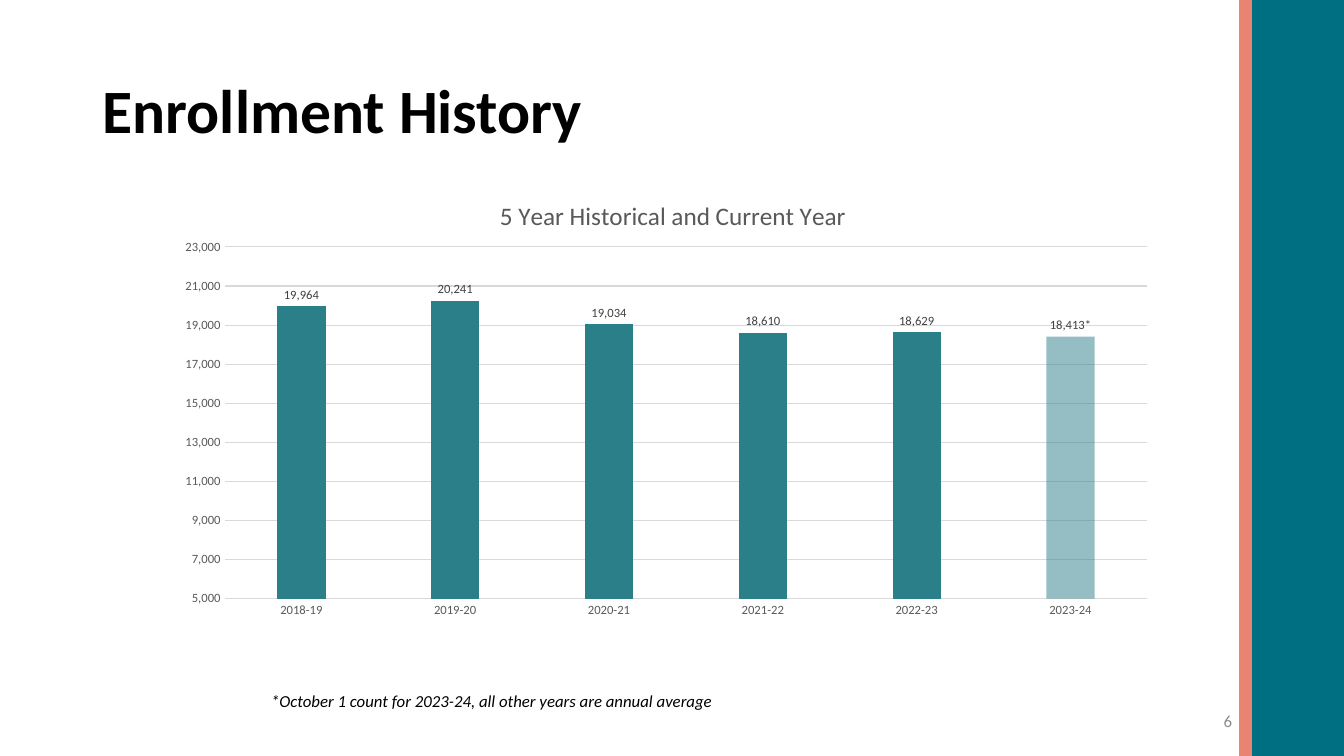
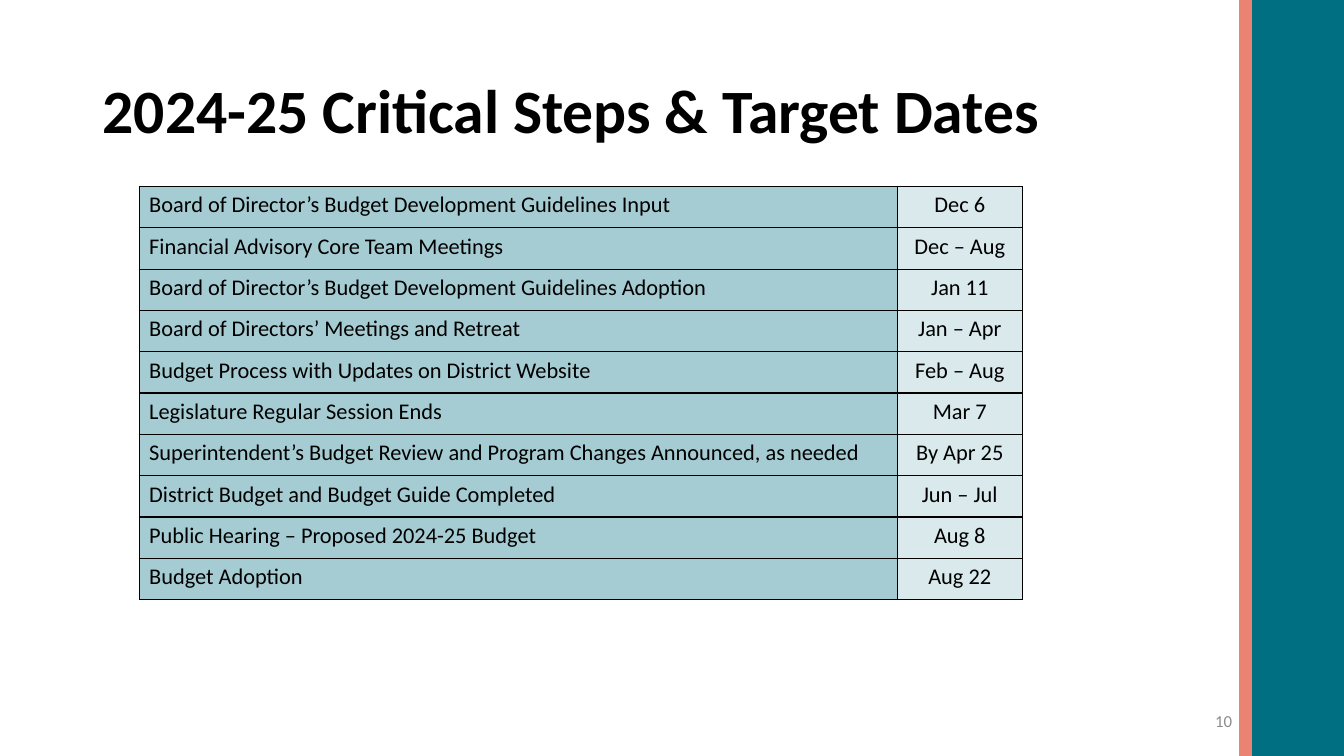
"""Build the enrollment history and budget calendar slides."""
from dataclasses import dataclass
from typing import Any

from lxml import etree
from pptx import Presentation
from pptx.chart.data import CategoryChartData
from pptx.dml.color import RGBColor
from pptx.enum.chart import XL_CHART_TYPE, XL_LABEL_POSITION, XL_TICK_MARK
from pptx.enum.shapes import MSO_SHAPE
from pptx.enum.text import MSO_ANCHOR, PP_ALIGN
from pptx.oxml.ns import qn
from pptx.slide import Slide
from pptx.util import Inches, Pt

RECTANGLE = MSO_SHAPE.RECTANGLE
COLUMNS = XL_CHART_TYPE.COLUMN_CLUSTERED
OUTSIDE_END = XL_LABEL_POSITION.OUTSIDE_END
NO_TICK = XL_TICK_MARK.NONE
TOP, MIDDLE = MSO_ANCHOR.TOP, MSO_ANCHOR.MIDDLE
LEFT, CENTER, RIGHT = PP_ALIGN.LEFT, PP_ALIGN.CENTER, PP_ALIGN.RIGHT

BLACK = RGBColor(0x00, 0x00, 0x00)
WHITE = RGBColor(0xFF, 0xFF, 0xFF)
CORAL = RGBColor(0xEA, 0x83, 0x71)
TEAL = RGBColor(0x00, 0x6F, 0x82)
BAR_TEAL = RGBColor(0x2A, 0x7F, 0x88)
AXIS_GRAY = RGBColor(0x59, 0x59, 0x59)
LABEL_GRAY = RGBColor(0x40, 0x40, 0x40)
GRID_GRAY = RGBColor(0xD9, 0xD9, 0xD9)
NUMBER_GRAY = RGBColor(0x8C, 0x8C, 0x8C)
FONT = "Calibri"


@dataclass(frozen=True)
class Box:
    """Position and size in inches."""
    left: float
    top: float
    width: float
    height: float

    def lengths(self) -> tuple[int, ...]:
        """Return the four measures as lengths."""
        return tuple(map(Inches, (self.left, self.top, self.width, self.height)))


@dataclass(frozen=True)
class TextStyle:
    """Format of a one-paragraph text."""
    size: float
    color: RGBColor = BLACK
    bold: bool = False
    italic: bool = False
    align: PP_ALIGN = LEFT
    anchor: MSO_ANCHOR = TOP
    line_spacing: float = 1.0


@dataclass(frozen=True)
class Band:
    """Coloured band on the right edge."""
    left: float
    color: RGBColor


@dataclass(frozen=True)
class Step:
    """Budget step and its target date."""
    name: str
    date: str


TITLE_STYLE = TextStyle(44, bold=True, anchor=MIDDLE, line_spacing=0.9)
NOTE_STYLE = TextStyle(12, italic=True)
NUMBER_STYLE = TextStyle(12, NUMBER_GRAY, align=RIGHT, anchor=MIDDLE)
STEP_STYLE = TextStyle(16)
DATE_STYLE = TextStyle(16, align=CENTER)
CHART_TITLE_STYLE = TextStyle(18, AXIS_GRAY)
AXIS_STYLE = TextStyle(9, AXIS_GRAY)
LABEL_STYLE = TextStyle(9, LABEL_GRAY)

BANDS = (Band(12.3, CORAL), Band(12.42, TEAL))
ENROLLMENT = {
    "2018-19": 19964,
    "2019-20": 20241,
    "2020-21": 19034,
    "2021-22": 18610,
    "2022-23": 18629,
    "2023-24": 18413,
}
STEPS = (
    Step("Board of Director’s Budget Development Guidelines Input", "Dec 6"),
    Step("Financial Advisory Core Team Meetings", "Dec – Aug"),
    Step("Board of Director’s Budget Development Guidelines Adoption", "Jan 11"),
    Step("Board of Directors’ Meetings and Retreat", "Jan – Apr"),
    Step("Budget Process with Updates on District Website", "Feb – Aug"),
    Step("Legislature Regular Session Ends", "Mar 7"),
    Step("Superintendent’s Budget Review and Program Changes Announced, as needed", "By Apr 25"),
    Step("District Budget and Budget Guide Completed", "Jun – Jul"),
    Step("Public Hearing – Proposed 2024-25 Budget", "Aug 8"),
    Step("Budget Adoption", "Aug 22"),
)
ROW_HEIGHT = 0.41
COLUMN_WIDTHS = (7.52, 1.24)
COLUMN_OPACITIES = (35, 15)


def set_values(target: Any, values: dict[str, Any]) -> None:
    """Set each named attribute of the target."""
    for name, value in values.items():
        setattr(target, name, value)


def format_font(font: Any, style: TextStyle) -> None:
    """Apply a text style to a font."""
    set_values(font, {"name": FONT, "size": Pt(style.size), "bold": style.bold, "italic": style.italic})
    font.color.rgb = style.color


def write_text(frame: Any, text: str, style: TextStyle) -> None:
    """Write one styled paragraph into a text frame."""
    paragraph = frame.paragraphs[0]
    set_values(paragraph, {"alignment": style.align, "line_spacing": style.line_spacing})
    run = paragraph.add_run()
    run.text = text
    format_font(run.font, style)


def add_text(slide: Slide, box: Box, text: str, style: TextStyle) -> None:
    """Add a wrapping text box."""
    frame = slide.shapes.add_textbox(*box.lengths()).text_frame
    set_values(frame, {"word_wrap": True, "vertical_anchor": style.anchor})
    write_text(frame, text, style)


def set_opacity(colors: list[Any], percent: int) -> None:
    """Make colour elements partly transparent."""
    for color in colors:
        etree.SubElement(color, qn("a:alpha"), val=str(percent * 1000))


def add_base_slide(presentation: Any, title: str, number: int) -> Slide:
    """Add a slide with bands, title and slide number."""
    slide = presentation.slides.add_slide(presentation.slide_layouts[6])
    slide.background.fill.solid()
    slide.background.fill.fore_color.rgb = WHITE
    for band in BANDS:
        shape = slide.shapes.add_shape(RECTANGLE, *Box(band.left, -0.08, 1.1, 7.66).lengths())
        shape.shadow.inherit = False
        shape.fill.solid()
        shape.fill.fore_color.rgb = band.color
        shape.line.color.rgb = band.color
        shape.line.width = Pt(1)
    add_text(slide, Box(0.92, 0.4, 11.38, 1.45), title, TITLE_STYLE)
    add_text(slide, Box(9.32, 6.95, 3, 0.4), str(number), NUMBER_STYLE)
    return slide


def set_layout(parent: Any, index: int, measures: dict[str, str]) -> None:
    """Place a chart part by fractions of the chart area."""
    for old_layout in parent.findall(qn("c:layout")):
        parent.remove(old_layout)
    layout = etree.Element(qn("c:layout"))
    manual = etree.SubElement(layout, qn("c:manualLayout"))
    for name, value in measures.items():
        etree.SubElement(manual, qn(f"c:{name}"), val=value)
    parent.insert(index, layout)


def format_line(line: Any) -> None:
    """Give a chart line the thin grid style."""
    line.color.rgb = GRID_GRAY
    line.width = Pt(0.75)


def add_enrollment_chart(slide: Slide) -> None:
    """Add the column chart of yearly enrollment."""
    data = CategoryChartData(number_format="#,##0")
    data.categories = list(ENROLLMENT)
    data.add_series("Series 1", list(ENROLLMENT.values()))
    chart = slide.shapes.add_chart(COLUMNS, *Box(1.63, 1.7, 9.95, 4.52).lengths(), data).chart
    chart.has_legend = False
    format_font(chart.font, TextStyle(10))
    write_text(chart.chart_title.text_frame, "5 Year Historical and Current Year", CHART_TITLE_STYLE)
    set_layout(chart.chart_title.element, 1, {"xMode": "edge", "yMode": "edge", "x": "0.33", "y": "0.05"})
    set_layout(chart.element.xpath("c:chart/c:plotArea")[0], 0, {
        "layoutTarget": "inner", "xMode": "edge", "yMode": "edge",
        "x": "0.06", "y": "0.166", "w": "0.92", "h": "0.772",
    })

    for axis in (chart.category_axis, chart.value_axis):
        set_values(axis, {"major_tick_mark": NO_TICK, "minor_tick_mark": NO_TICK})
        format_font(axis.tick_labels.font, AXIS_STYLE)
    format_line(chart.category_axis.format.line)
    value_axis = chart.value_axis
    set_values(value_axis, {
        "minimum_scale": 5000, "maximum_scale": 23000,
        "major_unit": 2000, "has_major_gridlines": True,
    })
    set_values(value_axis.tick_labels, {"number_format": "#,##0", "number_format_is_linked": False})
    value_axis.format.line.fill.background()
    format_line(value_axis.major_gridlines.format.line)

    plot = chart.plots[0]
    set_values(plot, {"gap_width": 219, "overlap": -27, "vary_by_categories": False})
    series = plot.series[0]
    series.invert_if_negative = False
    current = series.points[len(ENROLLMENT) - 1]
    for bars in (series, current):
        bars.format.fill.solid()
        bars.format.fill.fore_color.rgb = BAR_TEAL
    set_opacity(chart.element.xpath(".//c:dPt//a:srgbClr"), 50)
    labels = series.data_labels
    set_values(labels, {
        "show_value": True, "position": OUTSIDE_END,
        "number_format": "#,##0", "number_format_is_linked": False,
    })
    format_font(labels.font, LABEL_STYLE)
    write_text(current.data_label.text_frame, "18,413*", LABEL_STYLE)
    current.data_label.position = OUTSIDE_END


def format_cell(cell: Any, opacity: int) -> None:
    """Give a table cell black borders and a tinted fill."""
    properties = cell._tc.get_or_add_tcPr()
    for side in ("lnL", "lnR", "lnT", "lnB"):
        line = etree.SubElement(properties, qn(f"a:{side}"), w=str(Pt(1)))
        fill = etree.SubElement(line, qn("a:solidFill"))
        etree.SubElement(fill, qn("a:srgbClr"), val=str(BLACK))
    cell.fill.solid()
    cell.fill.fore_color.rgb = TEAL
    set_opacity(properties.xpath("a:solidFill/a:srgbClr"), opacity)


def add_steps_table(slide: Slide) -> None:
    """Add the table of steps and dates."""
    box = Box(1.38, 1.85, sum(COLUMN_WIDTHS), ROW_HEIGHT * len(STEPS))
    table = slide.shapes.add_table(len(STEPS), len(COLUMN_WIDTHS), *box.lengths()).table
    set_values(table, {"first_row": False, "horz_banding": False})
    for column, width in zip(table.columns, COLUMN_WIDTHS):
        column.width = Inches(width)
    for row, step in zip(table.rows, STEPS):
        row.height = Inches(ROW_HEIGHT)
        texts = ((step.name, STEP_STYLE), (step.date, DATE_STYLE))
        for cell, (text, style), opacity in zip(row.cells, texts, COLUMN_OPACITIES):
            write_text(cell.text_frame, text, style)
            format_cell(cell, opacity)


def main() -> None:
    """Build and save the presentation."""
    presentation = Presentation()
    set_values(presentation, {"slide_width": Inches(13.33), "slide_height": Inches(7.5)})
    history = add_base_slide(presentation, "Enrollment History", 6)
    add_enrollment_chart(history)
    note = "*October 1 count for 2023-24, all other years are annual average"
    add_text(history, Box(2.59, 6.8, 4.73, 0.3), note, NOTE_STYLE)
    calendar = add_base_slide(presentation, "2024-25 Critical Steps & Target Dates", 10)
    add_steps_table(calendar)
    presentation.save("out.pptx")


if __name__ == "__main__":
    main()
